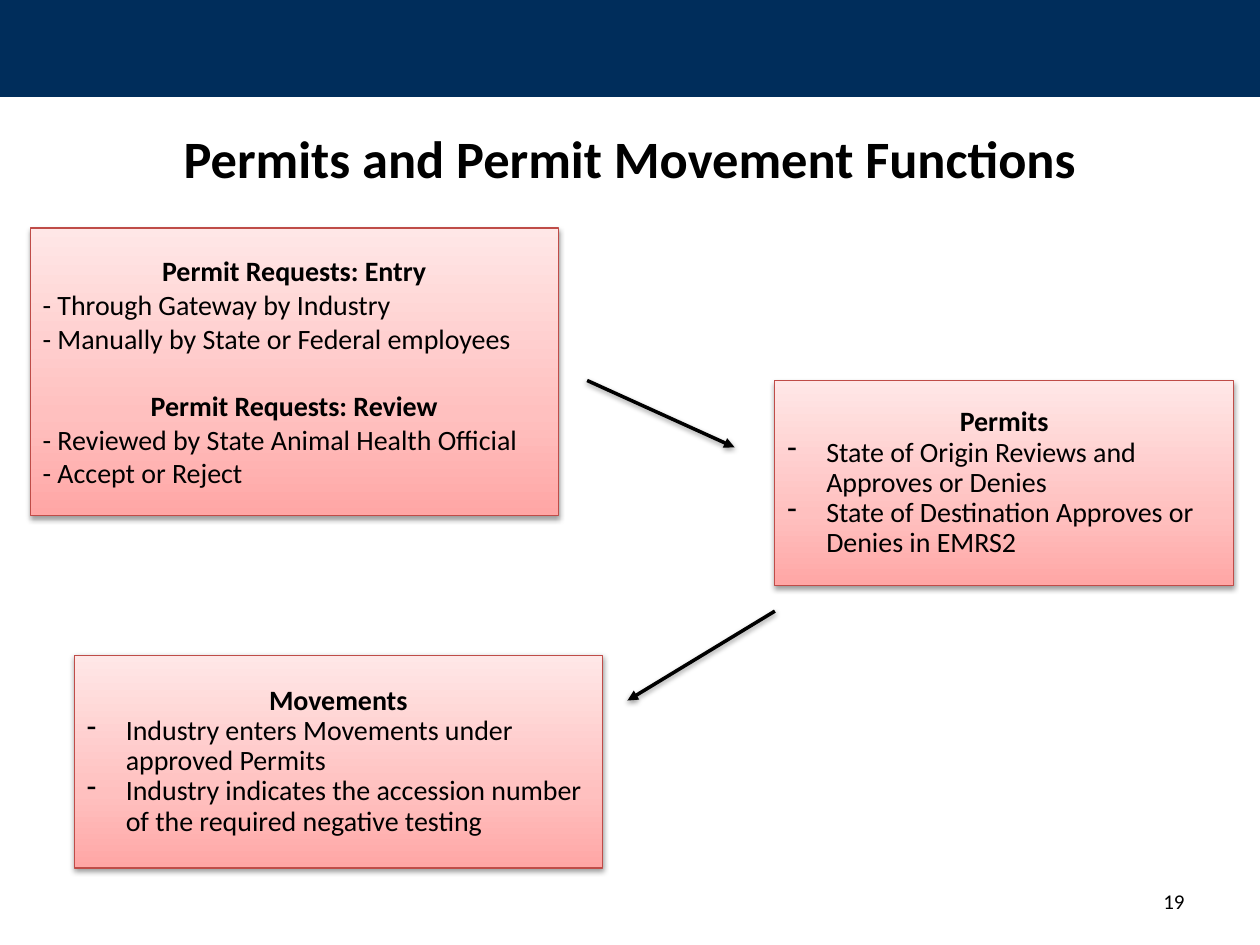
from copy import deepcopy

from lxml import etree
from pptx import Presentation
from pptx.dml.color import RGBColor
from pptx.enum.shapes import MSO_CONNECTOR, MSO_SHAPE
from pptx.enum.text import MSO_ANCHOR, PP_ALIGN
from pptx.oxml.ns import qn
from pptx.util import Inches, Pt

RECTANGLE = MSO_SHAPE.RECTANGLE
STRAIGHT = MSO_CONNECTOR.STRAIGHT
MIDDLE = MSO_ANCHOR.MIDDLE
LEFT, CENTER, RIGHT = PP_ALIGN.LEFT, PP_ALIGN.CENTER, PP_ALIGN.RIGHT

FONT = "Calibri"
COLORS = {"banner": "002D5B", "text": "000000", "border": "BF4C48", "shadow": "000000"}
GRADIENT = [(0, "FFA6A5"), (0.35, "FFC0BF"), (1, "FFE7E7")]

TITLE = "Permits and Permit Movement Functions"
PAGE_NUMBER = "19"
BOXES = [
    {
        "place": (0.24, 1.81, 4.19, 2.28),
        "spacing": 1.0,
        "bulleted": False,
        "sections": [
            ("Permit Requests: Entry", [
                "- Through Gateway by Industry",
                "- Manually by State or Federal employees",
            ]),
            ("Permit Requests: Review", [
                "- Reviewed by State Animal Health Official",
                "- Accept or Reject",
            ]),
        ],
    },
    {
        "place": (6.15, 3.02, 3.64, 1.63),
        "spacing": 0.9,
        "bulleted": True,
        "sections": [
            ("Permits", [
                "State of Origin Reviews and Approves or Denies",
                "State of Destination Approves or Denies in EMRS2",
            ]),
        ],
    },
    {
        "place": (0.59, 5.2, 4.19, 1.69),
        "spacing": 0.9,
        "bulleted": True,
        "sections": [
            ("Movements", [
                "Industry enters Movements under approved Permits",
                "Industry indicates the accession number of the required negative testing",
            ]),
        ],
    },
]
ARROWS = [((4.66, 3.02), (5.83, 3.55)), ((6.15, 4.85), (4.98, 5.56))]


def color(name):
    return RGBColor.from_string(COLORS[name])


def inches(values):
    return [Inches(value) for value in values]


def add_text(paragraph, text, size, bold=False, alignment=LEFT):
    paragraph.alignment = alignment
    run = paragraph.add_run()
    run.text = text
    run.font.name = FONT
    run.font.size = Pt(size)
    run.font.bold = bold
    run.font.color.rgb = color("text")


def add_shadow(properties):
    effects = properties.find(qn("a:effectLst"))
    if effects is None:
        effects = etree.SubElement(properties, qn("a:effectLst"))
    shadow = etree.SubElement(effects, qn("a:outerShdw"), blurRad="40000",
                              dist="20000", dir="5400000", rotWithShape="0")
    shade = etree.SubElement(shadow, qn("a:srgbClr"), val=COLORS["shadow"])
    etree.SubElement(shade, qn("a:alpha"), val="38000")


def fill_gradient(shape):
    shape.fill.gradient()
    shape.fill.gradient_angle = 90
    stop_list = shape._element.spPr.find(qn("a:gradFill")).find(qn("a:gsLst"))
    stop_list.append(deepcopy(stop_list[0]))
    for stop, (position, value) in zip(shape.fill.gradient_stops, GRADIENT):
        stop.position = position
        stop.color.rgb = RGBColor.from_string(value)


def add_dash(paragraph):
    properties = paragraph._p.get_or_add_pPr()
    indent = Inches(0.31)
    properties.set("marL", str(indent))
    properties.set("indent", str(-indent))
    etree.SubElement(properties, qn("a:buChar"), char="-")


def add_box(slide, box):
    shape = slide.shapes.add_shape(RECTANGLE, *inches(box["place"]))
    fill_gradient(shape)
    shape.line.color.rgb = color("border")
    shape.line.width = Pt(0.75)
    shape.shadow.inherit = False
    add_shadow(shape._element.spPr)
    frame = shape.text_frame
    frame.word_wrap = True
    frame.vertical_anchor = MIDDLE
    for number, (heading, items) in enumerate(box["sections"]):
        paragraph = frame.add_paragraph() if number else frame.paragraphs[0]
        paragraph.line_spacing = box["spacing"]
        if number:
            paragraph.space_before = Pt(19.5)
        add_text(paragraph, heading, 16, True, CENTER)
        for item in items:
            paragraph = frame.add_paragraph()
            paragraph.line_spacing = box["spacing"]
            if box["bulleted"]:
                add_dash(paragraph)
            add_text(paragraph, item, 16)


def add_arrow(slide, start, end):
    arrow = slide.shapes.add_connector(STRAIGHT, *inches(start + end))
    arrow.line.color.rgb = color("text")
    arrow.line.width = Pt(2)
    etree.SubElement(arrow.line._get_or_add_ln(), qn("a:tailEnd"), type="triangle")
    add_shadow(arrow._element.spPr)


def main():
    presentation = Presentation()
    presentation.slide_width, presentation.slide_height = inches((10, 7.5))
    slide = presentation.slides.add_slide(presentation.slide_layouts[5])

    banner = slide.shapes.add_shape(RECTANGLE, *inches((0, 0, 10, 0.77)))
    banner.fill.solid()
    banner.fill.fore_color.rgb = color("banner")
    banner.line.fill.background()
    banner.shadow.inherit = False

    title = slide.shapes.title
    title.left, title.top, title.width, title.height = inches((0.5, 0.75, 9, 1))
    title.text_frame.vertical_anchor = MIDDLE
    add_text(title.text_frame.paragraphs[0], TITLE, 30, True, CENTER)

    number = slide.shapes.add_textbox(*inches((7.17, 6.95, 2.33, 0.4)))
    number.text_frame.word_wrap = True
    number.text_frame.vertical_anchor = MIDDLE
    add_text(number.text_frame.paragraphs[0], PAGE_NUMBER, 12, alignment=RIGHT)

    for box in BOXES:
        add_box(slide, box)
    for start, end in ARROWS:
        add_arrow(slide, start, end)
    presentation.save("out.pptx")


if __name__ == "__main__":
    main()
